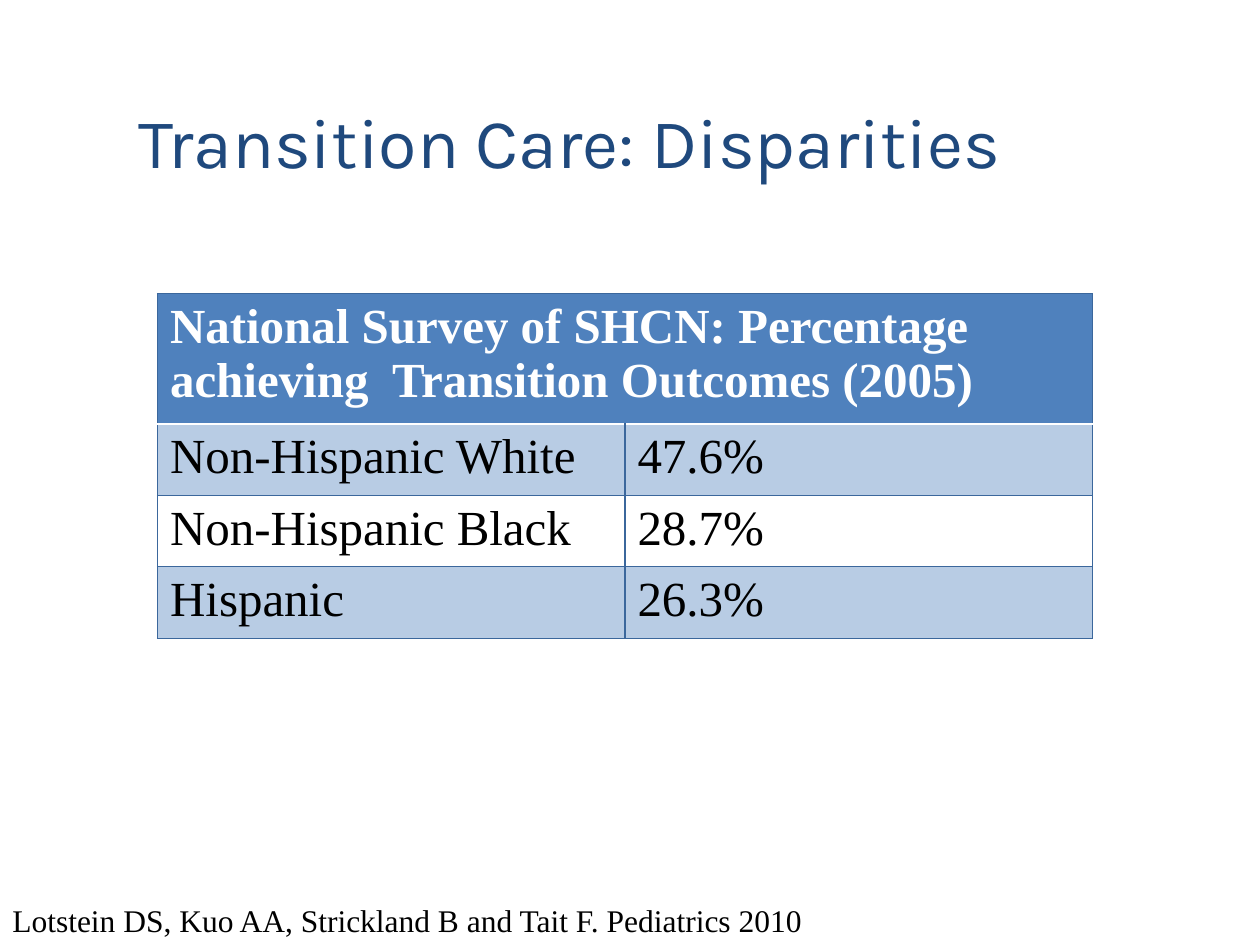
from lxml import etree
from pptx import Presentation
from pptx.dml.color import RGBColor
from pptx.enum.text import MSO_ANCHOR
from pptx.oxml.ns import qn
from pptx.util import Inches, Pt

BOTTOM, TOP = MSO_ANCHOR.BOTTOM, MSO_ANCHOR.TOP
SERIF = "Times New Roman"
BLUE, EDGE, WHITE, BLACK = "4F81BD", "3B679C", "FFFFFF", "000000"
HEAD = "National Survey of SHCN: Percentage achieving  Transition Outcomes (2005)"
RATES = [
    ("Non-Hispanic White", "47.6%"),
    ("Non-Hispanic Black", "28.7%"),
    ("Hispanic", "26.3%"),
]


def color(code):
    return RGBColor.from_string(code)


def write(frame, text, code, **style):
    run = frame.paragraphs[0].add_run()
    run.text = text
    for name, value in style.items():
        setattr(run.font, name, value)
    run.font.color.rgb = color(code)


def add_text(slide, box, text, code, anchor, low, **style):
    frame = slide.shapes.add_textbox(*map(Inches, box)).text_frame
    form = {"word_wrap": True, "vertical_anchor": anchor,
            "margin_bottom": Inches(low)}
    for name, value in form.items():
        setattr(frame, name, value)
    write(frame, text, code, **style)


def set_edge(cell, side, code, width):
    # Borders come before the fill in the cell properties
    props = cell._tc.get_or_add_tcPr()
    line = etree.Element(qn("a:" + side), w=str(Pt(width)))
    fill = etree.SubElement(line, qn("a:solidFill"))
    etree.SubElement(fill, qn("a:srgbClr"), val=code)
    props.insert(["lnL", "lnR", "lnT", "lnB"].index(side), line)


def paint(cell, code, alpha=None):
    if code is None:
        cell.fill.background()
        return
    cell.fill.solid()
    cell.fill.fore_color.rgb = color(code)
    if alpha:
        tone = cell._tc.tcPr.find(".//" + qn("a:solidFill") + "/" + qn("a:srgbClr"))
        etree.SubElement(tone, qn("a:alpha"), val=str(alpha * 1000))


def add_rates(slide, box):
    count = len(RATES) + 1
    table = slide.shapes.add_table(count, 2, *map(Inches, box)).table
    top = 1.03
    for row in table.rows:
        row.height = Inches((box[3] - top) / len(RATES))
    table.rows[0].height = Inches(top)

    # Fills and text
    head = table.cell(0, 0)
    head.merge(table.cell(0, 1))
    write(head.text_frame, HEAD, WHITE, name=SERIF, size=Pt(28), bold=True)
    for i, pair in enumerate(RATES, 1):
        for j, text in enumerate(pair):
            cell = table.cell(i, j)
            paint(cell, *((BLUE, 40) if i % 2 else (None,)))
            write(cell.text_frame, text, BLACK,
                  name=SERIF, size=Pt(28), bold=False)
    for j in range(2):
        paint(table.cell(0, j), BLUE)

    # Borders, with a white rule under the heading
    for i in range(count):
        for j in range(2):
            for side in ("lnL", "lnR", "lnT", "lnB"):
                rule = (i, side) in ((0, "lnB"), (1, "lnT"))
                set_edge(table.cell(i, j), side, *((WHITE, 1) if rule else (EDGE, 0.75)))


def main():
    deck = Presentation()
    deck.slide_width, deck.slide_height = Inches(10), Inches(7.5)
    slide = deck.slides.add_slide(deck.slide_layouts[6])
    # Title
    add_text(slide, (1, 0.3, 8.5, 1.25), "Transition Care: Disparities",
             "1F497D", BOTTOM, 0.1, name="Karla", size=Pt(40))
    # Citation
    add_text(slide, (0, 7.1, 10, 0.4),
             "Lotstein DS, Kuo AA, Strickland B and Tait F. Pediatrics 2010",
             BLACK, TOP, 0.05, name=SERIF, size=Pt(18))
    # Survey table
    add_rates(slide, (1.25, 2.33, 7.42, 2.73))
    deck.save("out.pptx")


if __name__ == "__main__":
    main()
